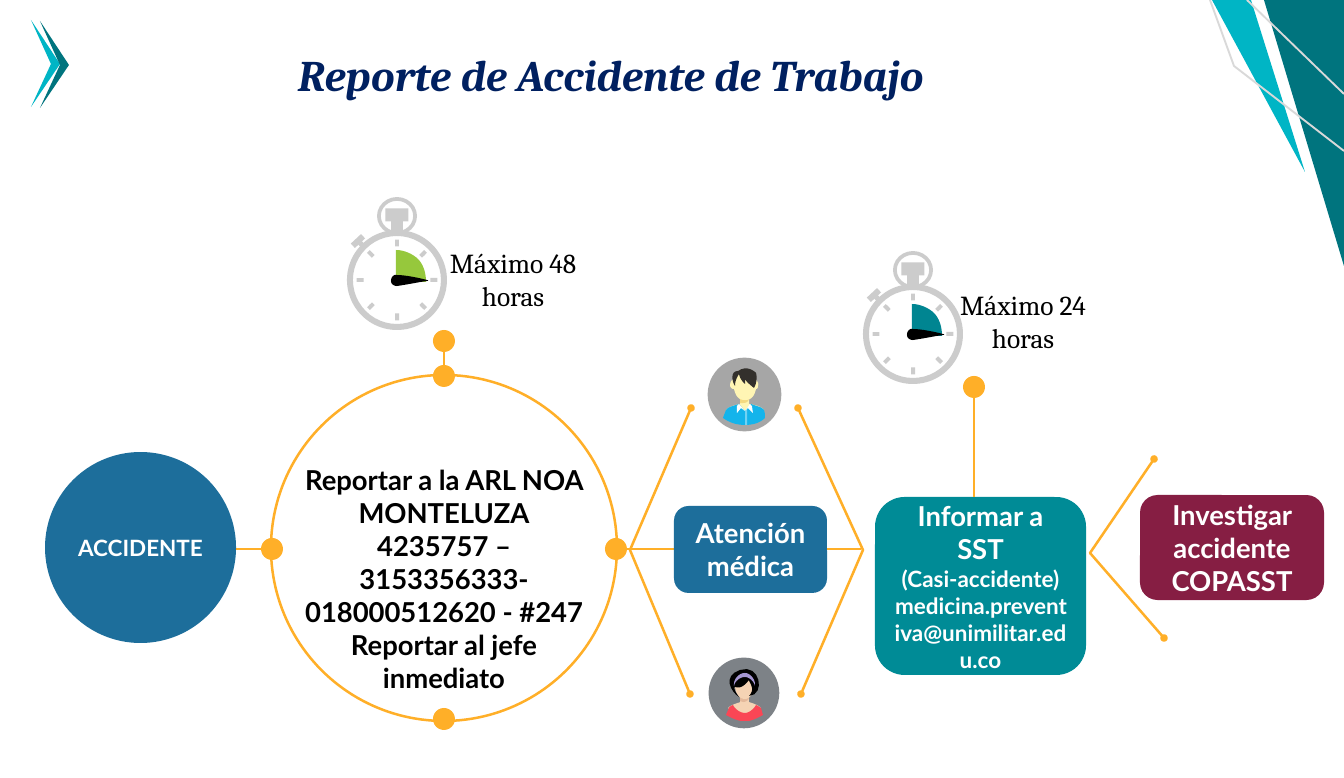
from math import cos, radians, sin
from lxml.etree import SubElement
from pptx import Presentation
from pptx.dml.color import RGBColor
from pptx.enum.shapes import MSO_CONNECTOR, MSO_SHAPE
from pptx.enum.text import MSO_ANCHOR, PP_ALIGN
from pptx.oxml.ns import qn
from pptx.util import Pt

PX = 10180
COLORS = {
    "orange": "FFAF28", "blue": "1D6E9B", "teal": "008B96", "wine": "861E43", "navy": "002060",
    "cyan": "00B5C5", "deep": "00747E", "grey": "D9D9D9", "clock": "CCCCCC", "green": "96C83C",
    "sea": "008591", "black": "000000", "white": "FFFFFF", "man_badge": "A6A6A6",
    "woman_badge": "7D8287", "man_skin": "FFF5B4", "man_shade": "F4D980", "man_shirt": "14B4EB",
    "man_hair": "33302C", "zip": "72D2F3", "woman_skin": "F5D3B4", "woman_shade": "E4B99B",
    "woman_hair": "010101", "headband": "A596D2", "woman_shirt": "FA4655",
}
MAN = [
    ("man_skin", [(47, 43), (45, 40, 39, 38, 32, 37), (32, 26), (23, 26), (23, 37),
                  (18, 38, 11, 40, 9, 43), (20, 57, 40, 55, 47, 43)]),
    ("man_shade", [(32, 32), (31, 35, 29, 36, 26, 36), (23, 36), (23, 26), (32, 26)]),
    ("man_skin", [(39, 13), (38, 6, 33, 2, 28, 2), (22, 2, 17, 6, 16, 13), (14, 13, 13, 16, 13, 19),
                  (14, 21, 15, 22, 17, 22), (19, 30, 22, 33, 28, 33), (33, 33, 37, 31, 39, 22),
                  (40, 22, 41, 21, 41, 19), (42, 16, 40, 14, 39, 13)]),
    ("man_shirt", [(34, 37), (28, 44), (22, 37), (16, 39, 11, 40, 9, 43), (8, 46, 7, 48, 6, 51),
                   (13, 56, 20, 58, 28, 58), (36, 58, 43, 56, 48, 51), (48, 48, 48, 46, 47, 43),
                   (45, 40, 39, 39, 34, 37)]),
    ("man_hair", [(39, 6), (37, 4, 30, -2, 21, 4), (13, 4, 15, 15, 18, 19), (18, 13, 21, 9, 22, 7),
                  (23, 13, 28, 17, 28, 17), (28, 12), (29, 15, 37, 21, 37, 21), (40, 16, 40, 9, 39, 6)]),
    ("zip", [(30, 58), (28, 58), (28, 44), (30, 42)]),
    ("white", [(20, 39), (20, 46), (24, 41), (28, 44), (22, 37)]),
    ("white", [(35, 39), (36, 46), (31, 41), (28, 44), (33, 37)]),
]
WOMAN = [
    ("woman_skin", [(43, 41), (40, 37, 27, 34, 27, 34), (27, 34, 13, 37, 10, 41), (24, 54, 36, 48, 43, 41)]),
    ("woman_skin", [(22, 26), (31, 26), (31, 39), (22, 39)]),
    ("woman_shade", [(31, 31), (30, 34, 27, 35, 25, 35), (22, 34), (22, 26), (31, 26)]),
    ("woman_skin", [(17, 18), (17, 10, 21, 5, 27, 5), (32, 5, 36, 10, 36, 18),
                    (36, 26, 32, 32, 27, 32), (21, 32, 17, 26, 17, 18)]),
    ("woman_hair", [(31, 29), (31, 29, 35, 25, 34, 21), (33, 16, 31, 15, 31, 13), (27, 18, 23, 22, 17, 20),
                    (15, 21, 18, 26, 21, 30), (13, 25, 4, 9, 22, 3), (42, -4, 48, 28, 31, 29)]),
    ("headband", [(27, 10), (22, 10, 17, 14, 16, 19), (16, 17), (16, 12, 21, 6, 27, 6),
                  (32, 6, 37, 12, 37, 17), (37, 19), (36, 14, 31, 10, 27, 10)]),
    ("woman_shirt", [(38, 38), (36, 42, 31, 46, 27, 46), (22, 46, 17, 42, 15, 38), (13, 39, 11, 40, 11, 41),
                     (8, 48), (13, 51, 18, 53, 23, 54), (31, 54), (35, 53, 40, 51, 45, 48),
                     (43, 41), (42, 40, 40, 39, 38, 38)]),
]
WEDGE = [(79, 85), (49, 85), (49, 53), (57, 53, 66, 57, 71, 62), (76, 67, 79, 75, 79, 84)]
HAND = [(50, 89), (47, 89, 44, 87, 44, 84), (44, 80, 47, 77, 50, 78), (58, 78, 73, 81, 80, 83),
        (82, 83, 81, 84, 80, 84), (72, 85, 58, 88, 50, 89)]


def rgb(name):
    """Return the named colour."""
    return RGBColor.from_string(COLORS[name])


def paint(shape, fill=None, line=None, width=2):
    """Set the fill and outline of a shape and drop its shadow."""
    shape.shadow.inherit = False
    if fill:
        shape.fill.solid()
        shape.fill.fore_color.rgb = rgb(fill)
    else:
        shape.fill.background()
    if line:
        shape.line.color.rgb = rgb(line)
        shape.line.width = Pt(width)
    else:
        shape.line.fill.background()
    return shape


def add_preset(slide, kind, box, **look):
    """Add a painted preset shape in a px box."""
    return paint(slide.shapes.add_shape(kind, *(round(value * PX) for value in box)), **look)


def flatten(outline, steps=8):
    """Turn corners and cubic curves into a list of points."""
    points = [outline[0]]
    for entry in outline[1:]:
        if len(entry) == 2:
            points.append(entry)
            continue
        controls = [points[-1], entry[:2], entry[2:4], entry[4:]]
        for step in range(1, steps + 1):
            t = step / steps
            weights = ((1 - t) ** 3, 3 * t * (1 - t) ** 2, 3 * t * t * (1 - t), t ** 3)
            points.append(tuple(sum(w * c[axis] for w, c in zip(weights, controls)) for axis in (0, 1)))
    return points


def add_outline(slide, outline, origin=(0, 0), close=True, **look):
    """Add a freeform whose outline is given relative to an origin."""
    points = [((x + origin[0]) * PX, (y + origin[1]) * PX) for x, y in flatten(outline)]
    builder = slide.shapes.build_freeform(*points[0])
    builder.add_line_segments(points[1:], close=close)
    return paint(builder.convert_to_shape(), **look)


def add_link(slide, start, end):
    """Add a straight orange connector."""
    connector = slide.shapes.add_connector(MSO_CONNECTOR.STRAIGHT, *(value * PX for value in start + end))
    connector.line.color.rgb = rgb("orange")
    connector.line.width = Pt(2)
    SubElement(connector._element.spPr, qn("a:effectLst"))


def add_dot(slide, x, y):
    """Add an orange dot centred on a point."""
    add_preset(slide, MSO_SHAPE.OVAL, (x - 11, y - 11, 22, 22), fill="orange")


def write(shape, lines, color, font="Lato", anchor=MSO_ANCHOR.MIDDLE, inset=None, **style):
    """Write centred paragraphs of (text, size) in a shape."""
    frame = shape.text_frame
    layout = {"word_wrap": True, "vertical_anchor": anchor}
    if inset is not None:
        layout.update({f"margin_{side}": inset for side in ("left", "top", "right", "bottom")})
    for name, value in layout.items():
        setattr(frame, name, value)
    for index, (text, size) in enumerate(lines):
        paragraph = frame.add_paragraph() if index else frame.paragraphs[0]
        paragraph.text = text
        paragraph.alignment = PP_ALIGN.CENTER
        for name, value in {"name": font, "size": Pt(size), **style}.items():
            setattr(paragraph.font, name, value)
        paragraph.font.color.rgb = rgb(color)


def add_label(slide, box, lines, **style):
    """Add a text box anchored at the top."""
    label = slide.shapes.add_textbox(*(value * PX for value in box))
    write(label, lines, "black", anchor=MSO_ANCHOR.TOP, **style)


def add_card(slide, box, fill, lines, kind=MSO_SHAPE.ROUNDED_RECTANGLE, inset=None):
    """Add a filled stage with bold white text."""
    write(add_preset(slide, kind, box, fill=fill), lines, "white", inset=inset, bold=True)


def add_bracket(slide, origin, points):
    """Add an open bracket with oval ends."""
    bracket = add_outline(slide, points, origin, close=False, line="orange")
    line = bracket.line._get_or_add_ln()
    for end in ("a:headEnd", "a:tailEnd"):
        SubElement(line, qn(end), type="oval")


def add_avatar(slide, box, badge, parts):
    """Draw a person on a round badge."""
    add_preset(slide, MSO_SHAPE.OVAL, box, fill=badge, line=badge, width=15)
    for color, outline in parts:
        add_outline(slide, outline, box[:2], fill=color)


def add_stopwatch(slide, origin, wedge):
    """Draw a stopwatch with a coloured quarter."""
    left, top = origin
    for box, thickness in (((0, 33, 100, 100), 0.06), ((30, 0, 40, 38), 0.1)):
        ring = add_preset(slide, MSO_SHAPE.DONUT, (left + box[0], top + box[1], *box[2:]), fill="clock")
        ring.adjustments[0] = thickness
    bars = [(50, 18, 23, 13, 0), (50, 30, 12, 12, 0), (11, 44, 14, 6, -43), (15, 48, 6, 5, 45)]
    bars += [(50 + 37 * cos(radians(a)), 83 + 37 * sin(radians(a)), 7, 4, a) for a in range(0, 360, 45)]
    for x, y, width, height, angle in bars:
        box = (left + x - width / 2, top + y - height / 2, width, height)
        add_preset(slide, MSO_SHAPE.RECTANGLE, box, fill="clock").rotation = angle
    add_outline(slide, WEDGE, origin, fill=wedge)
    add_outline(slide, HAND, origin, fill="black")


def add_decoration(slide, box):
    """Draw the chevrons and the corner bands."""
    left, top, width, _ = box
    right = (left + width, top)
    chevron = [(0, 0), (29, 44), (0, 87), (20, 44)]
    add_outline(slide, chevron, (left + 31, top + 20), fill="cyan")
    add_outline(slide, [(0, 0), (0, 266), (-80, 0)], right, fill="deep")
    add_outline(slide, [(-93, 0), (-39, 172), (-132, 0)], right, fill="cyan")
    add_outline(slide, chevron, (left + 40, top + 21), fill="deep")
    for points in ([(-134, 0), (-110, 66), (0, 151)], [(-97, 0), (0, 94)]):
        add_outline(slide, points, right, close=False, line="grey", width=1.5)


def add_title(slide, box):
    """Place and format the title."""
    title = slide.shapes.title
    for name, value in zip(("left", "top", "width", "height"), box):
        setattr(title, name, value * PX)
    write(title, [("Reporte de Accidente de Trabajo", 35)], "navy", "Cambria", inset=0, bold=True, italic=True)


def add_report(slide, box):
    """Draw the accident and the report circle with its dots."""
    left, top, size, _ = box
    center, middle = left + size // 2, top + size // 2 + 1
    add_preset(slide, MSO_SHAPE.OVAL, box, line="orange")
    add_link(slide, (left - 110, middle), (left, middle))
    add_link(slide, (left + size - 2, middle), (left + size + 244, middle))
    add_link(slide, (center, top + 3), (center, top - 34))
    for x, y in ((left + 1, middle), (center, top + size - 2), (center, top + 1),
                 (left + size - 1, middle), (center, top - 34)):
        add_dot(slide, x, y)
    add_card(slide, (left - 226, top + 77, 191, 191), "blue", [("ACCIDENTE", 18)], MSO_SHAPE.OVAL, 0)
    lines = ["Reportar a la ARL NOA MONTELUZA", "4235757 – 3153356333- 018000512620 - #247",
             "Reportar al jefe inmediato"]
    add_label(slide, (left + 12, top + 84, 322, 242), [(line, 22) for line in lines], bold=True)


def add_care(slide, box):
    """Draw the medical care stage between its brackets."""
    left, top, width, _ = box
    add_bracket(slide, (left, top), [(61, 0), (0, 142), (60, 286)])
    add_bracket(slide, (left + width, top), [(-65, 0), (0, 142), (-62, 286)])
    add_card(slide, (left + 44, top + 98, 153, 87), "blue", [("Atención médica", 22)])
    add_avatar(slide, (left + 87, top - 41, 55, 55), "man_badge", MAN)
    add_avatar(slide, (left + 88, top + 259, 52, 52), "woman_badge", WOMAN)


def add_follow_up(slide, box):
    """Draw the notice and investigation stages."""
    left, top, _, height = box
    add_bracket(slide, (left + 215, top), [(64, -38), (0, 56), (74, 141)])
    lines = [("Informar a SST", 22), ("(Casi-accidente) medicina.preventiva@unimilitar.edu.co", 18)]
    add_card(slide, (left, top, 211, height), "teal", lines)
    add_card(slide, (left + 265, top - 2, 184, 105), "wine", [("Investigar accidente COPASST", 22)])
    add_link(slide, (left + 99, top), (left + 99, top - 110))
    add_dot(slide, left + 99, top - 110)


def add_deadline(slide, box, wedge, text, label_offset):
    """Draw a stopwatch with its time limit."""
    left, top, _, _ = box
    add_stopwatch(slide, (left, top), wedge)
    x, y = label_offset
    add_label(slide, (left + x, top + y, 148, 75), [(text, 22)], font="Cambria")


def main():
    """Build and save the slide."""
    presentation = Presentation()
    presentation.slide_width, presentation.slide_height = 1344 * PX, 778 * PX
    slide = presentation.slides.add_slide(presentation.slide_layouts[5])
    add_decoration(slide, (0, 0, 1344, 778))
    add_title(slide, (99, 48, 1024, 53))
    add_report(slide, (271, 375, 346, 346))
    add_care(slide, (630, 408, 233, 286))
    add_follow_up(slide, (875, 497, 449, 178))
    add_deadline(slide, (347, 197, 240, 134), "green", "Máximo 48 horas", (92, 45))
    add_deadline(slide, (863, 251, 234, 134), "sea", "Máximo 24 horas", (86, 33))
    presentation.save("out.pptx")


if __name__ == "__main__":
    main()
